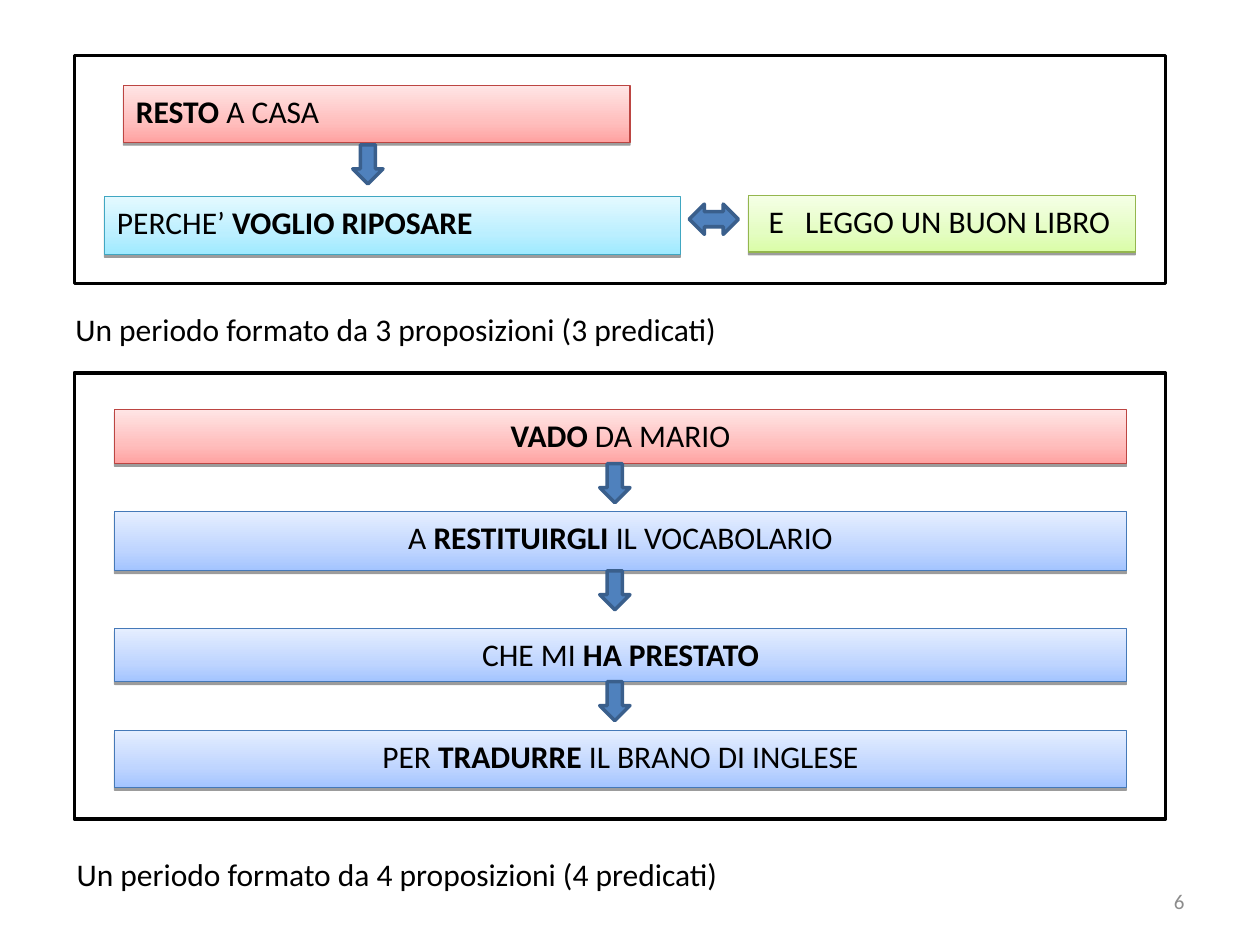
from lxml import etree
from pptx import Presentation
from pptx.dml.color import RGBColor
from pptx.enum.shapes import MSO_SHAPE
from pptx.enum.text import MSO_ANCHOR, PP_ALIGN
from pptx.oxml import parse_xml
from pptx.oxml.ns import nsdecls, qn
from pptx.util import Pt

PX = 9144  # 100 px to the inch
FONT = "Calibri"
LEFT, CENTER, RIGHT = PP_ALIGN.LEFT, PP_ALIGN.CENTER, PP_ALIGN.RIGHT
TOP, MIDDLE = MSO_ANCHOR.TOP, MSO_ANCHOR.MIDDLE
RECTANGLE = MSO_SHAPE.RECTANGLE
DOWN_ARROW, DOUBLE_ARROW = MSO_SHAPE.DOWN_ARROW, MSO_SHAPE.LEFT_RIGHT_ARROW

COLORS = {
    "text": "000000",
    "number": "8C8C8C",
    "frame": "000000",
    "frame_fill": "FFFFFF",
    "arrow": "4F81BD",
    "arrow_line": "3A5F8C",
    "red_line": "BC4542",
    "cyan_line": "40A7C2",
    "green_line": "94B64E",
    "blue_line": "4579B8",
}
GRADIENTS = {  # from bottom to top
    "red": ("FFA2A1", "FFBEBD", "FFE5E5"),
    "cyan": ("9EEAFF", "BBEFFF", "E4F9FF"),
    "green": ("DAFDA7", "E4FDC2", "F5FFE6"),
    "blue": ("A3C4FF", "BFD5FF", "E5EEFF"),
}
GRADIENT_STOPS = (0, 35, 100)
ARROW_WIDTH, ARROW_HEIGHT = 24, 31


def color(name):
    return RGBColor.from_string(COLORS[name])


def emu(*lengths):
    return [length * PX for length in lengths]


def write_text(frame, text, size=18, tone="text", align=LEFT, anchor=TOP, after=0):
    """Write one paragraph; parts between asterisks are bold."""
    frame.word_wrap = True
    frame.vertical_anchor = anchor
    paragraph = frame.paragraphs[0]
    paragraph.alignment = align
    paragraph.space_after = Pt(after)
    for index, part in enumerate(text.split("*")):
        if part:
            run = paragraph.add_run()
            run.text = part
            run.font.name = FONT
            run.font.size = Pt(size)
            run.font.bold = index % 2 == 1
            run.font.color.rgb = color(tone)
    return paragraph


def add_label(slide, box, text, **text_format):
    label = slide.shapes.add_textbox(*emu(*box))
    write_text(label.text_frame, text, **text_format)


def add_plain_shape(slide, kind, box, fill, line, width=2):
    """Add a shape without shadow; fill None leaves the fill unset."""
    shape = slide.shapes.add_shape(kind, *emu(*box))
    shape.shadow.inherit = False
    if fill:
        shape.fill.solid()
        shape.fill.fore_color.rgb = color(fill)
    shape.line.color.rgb = color(line)
    shape.line.width = Pt(width)
    return shape


def add_clause(slide, box, text, hue, align=LEFT):
    """Add a clause box with a vertical gradient and a soft lower edge."""
    shape = add_plain_shape(slide, RECTANGLE, box, None, f"{hue}_line", width=0.75)
    properties = shape._element.spPr
    stops = "".join(
        f'<a:gs pos="{position * 1000}"><a:srgbClr val="{value}"/></a:gs>'
        for position, value in zip(GRADIENT_STOPS, GRADIENTS[hue])
    )
    properties.find(qn("a:prstGeom")).addnext(parse_xml(
        f'<a:gradFill {nsdecls("a")} rotWithShape="1"><a:gsLst>{stops}</a:gsLst>'
        '<a:lin ang="16200000" scaled="0"/></a:gradFill>'
    ))
    properties.find(qn("a:effectLst")).append(parse_xml(
        f'<a:outerShdw {nsdecls("a")} blurRad="0" dist="20000" dir="5400000" '
        'rotWithShape="0"><a:srgbClr val="000000"><a:alpha val="38000"/>'
        '</a:srgbClr></a:outerShdw>'
    ))
    return shape, write_text(shape.text_frame, text, align=align, after=10)


def add_tab_stop(paragraph, position):
    tabs = etree.SubElement(paragraph._p.get_or_add_pPr(), qn("a:tabLst"))
    etree.SubElement(tabs, qn("a:tab"), pos=str(position * PX), algn="l")


def add_down_arrow(slide, left, top):
    box = (left, top, ARROW_WIDTH, ARROW_HEIGHT)
    add_plain_shape(slide, DOWN_ARROW, box, "arrow", "arrow_line")


def build_three_clauses(slide, left, top, width, height):
    add_plain_shape(slide, RECTANGLE, (left, top, width, height), "frame_fill", "frame")
    add_clause(slide, (left + 39, top + 24, 402, 45), "*RESTO* A CASA", "red")
    add_clause(slide, (left + 24, top + 112, 457, 46), "PERCHE’ *VOGLIO RIPOSARE*", "cyan")
    shape, paragraph = add_clause(
        slide, (left + 535, top + 111, 307, 45), "E\tLEGGO UN BUON LIBRO", "green")
    shape.text_frame.margin_left = 16 * PX
    add_tab_stop(paragraph, 29)
    add_down_arrow(slide, left + 221, top + 71)
    add_plain_shape(slide, DOUBLE_ARROW, (left + 488, top + 118, 39, 24),
                    "arrow", "arrow_line")


def build_four_clauses(slide, left, top, width, height):
    add_plain_shape(slide, RECTANGLE, (left, top, width, height), "frame_fill", "frame")
    clauses = (
        (29, 43, "*VADO* DA MARIO", "red"),
        (110, 47, "A *RESTITUIRGLI* IL VOCABOLARIO", "blue"),
        (203, 42, "CHE MI *HA PRESTATO*", "blue"),
        (284, 45, "PER *TRADURRE* IL BRANO DI INGLESE", "blue"),
    )
    margin = 32
    for offset, clause_height, text, hue in clauses:
        box = (left + margin, top + offset, width - 2 * margin + 1, clause_height)
        add_clause(slide, box, text, hue, align=CENTER)
    for offset, clause_height, *_ in clauses[:-1]:
        add_down_arrow(slide, left + 417, top + offset + clause_height)


def main():
    presentation = Presentation()
    presentation.slide_width, presentation.slide_height = emu(1000, 750)
    slide = presentation.slides.add_slide(presentation.slide_layouts[6])
    build_three_clauses(slide, 59, 44, 866, 181)
    add_label(slide, (50, 241, 900, 47),
              "Un periodo formato da 3 proposizioni (3 predicati)")
    build_four_clauses(slide, 59, 296, 866, 354)
    add_label(slide, (51, 674, 884, 47),
              "Un periodo formato da 4 proposizioni (4 predicati)")
    add_label(slide, (717, 695, 233, 40), "6", size=12, tone="number",
              align=RIGHT, anchor=MIDDLE)
    presentation.save("out.pptx")


if __name__ == "__main__":
    main()
